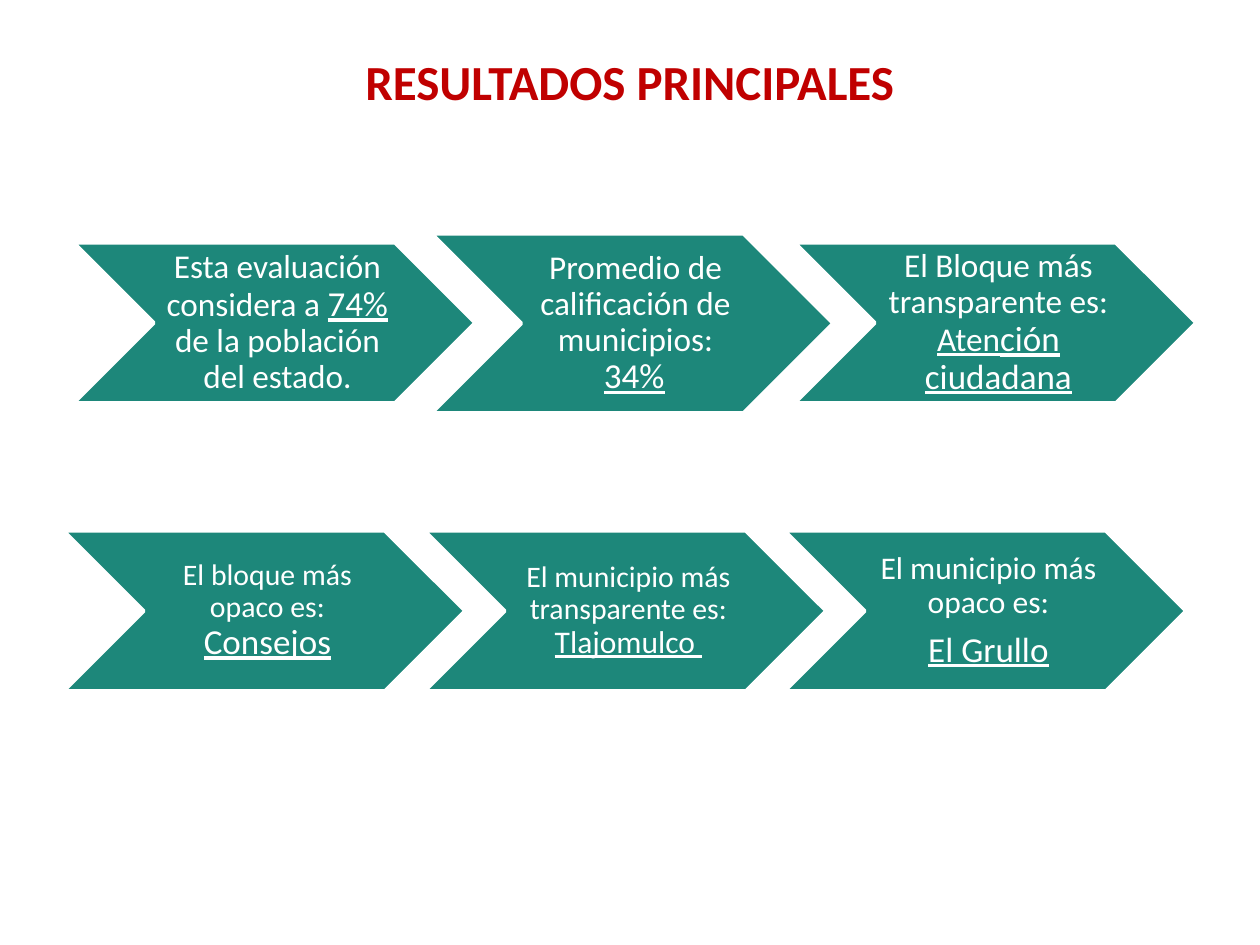
from pptx import Presentation
from pptx.dml.color import RGBColor
from pptx.enum.shapes import MSO_SHAPE
from pptx.enum.text import MSO_ANCHOR, MSO_AUTO_SIZE, PP_ALIGN
from pptx.util import Emu, Pt

PX = 914400 // 126
FONT = "Calibri"
COLORS = {"chevron": "1D877A", "light": "FFFFFF", "title": "C00000"}

# Each step: left, extra height, side inset, paragraphs of (text, size, underlined)
TOP_STEPS = [
    (74, 0, 4, [[("Esta evaluación considera a ", 19, False), ("74%", 20, True),
                 (" de la población del estado.", 19, False)]]),
    (432, 19, 4, [[("Promedio de calificación de municipios: ", 19, False),
                   ("34%", 20, True), ("\t", 16, False)]]),
    (795, 0, 4, [[("El Bloque más transparente es: ", 19, False),
                  ("Aten", 19, True), ("ción ciudadana", 20, True)]]),
]
BOTTOM_STEPS = [
    (64, 0, 3, [[("El bloque más opaco es: ", 17, False), ("Consejos", 20, True)]]),
    (425, 0, 3, [[("El municipio más transparente es: ", 17, False),
                  ("Tlajomulco ", 18, True)]]),
    (785, 0, 4, [[("El municipio más opaco es:", 18, False)],
                 [("El Grullo", 20, True)]]),
]


def px(*lengths):
    return [Emu(length * PX) for length in lengths]


def color(name):
    return RGBColor.from_string(COLORS[name])


def style_span(span, size, color_name):
    span.font.name = FONT
    span.font.size = Pt(size)
    span.font.color.rgb = color(color_name)


def add_title(page, left, top, width, height):
    box = page.shapes.add_textbox(*px(left, top, width, height))
    frame = box.text_frame
    frame.word_wrap = False
    frame.auto_size = MSO_AUTO_SIZE.SHAPE_TO_FIT_TEXT
    frame.text = "RESULTADOS PRINCIPALES"
    span = frame.paragraphs[0].runs[0]
    style_span(span, 28, "title")
    span.font.bold = True


def add_step(group, left, top, width, height, inset, paragraphs):
    # Arrow outline
    chevron = group.shapes.add_shape(MSO_SHAPE.CHEVRON, *px(left, top, width, height))
    chevron.shadow.inherit = False
    chevron.fill.solid()
    chevron.fill.fore_color.rgb = color("chevron")
    chevron.line.color.rgb = color("light")
    chevron.line.width = Pt(2)

    # Text between the notch and the point, each half the height deep
    notch = height // 2
    box = group.shapes.add_textbox(*px(left + notch, top, width - 2 * notch, height))
    frame = box.text_frame
    frame.word_wrap = True
    frame.vertical_anchor = MSO_ANCHOR.MIDDLE
    frame.margin_left = Emu((inset + 6) * PX)
    frame.margin_top = frame.margin_right = frame.margin_bottom = Emu(inset * PX)
    for index, spans in enumerate(paragraphs):
        para = frame.add_paragraph() if index else frame.paragraphs[0]
        para.alignment = PP_ALIGN.CENTER
        para.line_spacing = 0.9
        para.space_after = Pt(6.5)
        for text, size, underlined in spans:
            span = para.add_run()
            span.text = text
            style_span(span, size, "light")
            span.font.underline = underlined


def add_step_row(page, top, width, height, steps):
    group = page.shapes.add_group_shape()
    for left, extra, inset, paragraphs in steps:
        add_step(group, left, top - extra // 2, width, height + extra, inset, paragraphs)


def main():
    deck = Presentation()
    deck.slide_width, deck.slide_height = px(1260, 945)
    page = deck.slides.add_slide(deck.slide_layouts[6])
    add_step_row(page, 243, 401, 160, TOP_STEPS)
    add_step_row(page, 531, 401, 160, BOTTOM_STEPS)
    add_title(page, 353, 45, 556, 72)
    deck.save("out.pptx")


if __name__ == "__main__":
    main()
